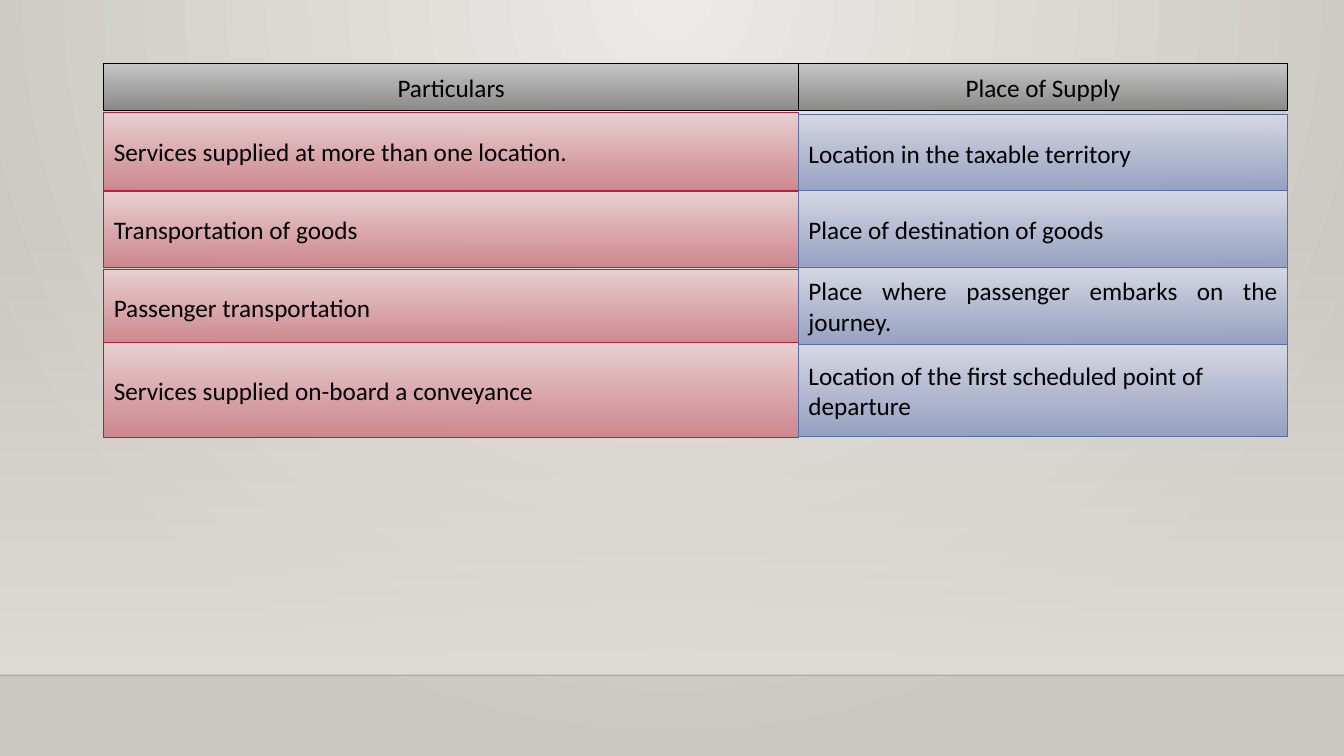
from dataclasses import dataclass

from lxml import etree
from pptx import Presentation
from pptx.dml.color import RGBColor
from pptx.enum import shapes, text
from pptx.oxml.ns import qn
from pptx.util import Inches, Pt


@dataclass(frozen=True)
class Theme:
    font: str = "Calibri"
    size: float = 18
    ink: str = "000000"
    backdrop: tuple = ("ECEAE7", "CAC7C1")
    wall: str = "DFDBD5"
    floor_line: str = "000001"
    # top colour, bottom colour, outline
    header: tuple = ("C8C8C8", "848484", "000000")
    red: tuple = ("EAD1D3", "CD828A", "B71E42")
    blue: tuple = ("D6D9E5", "929DC0", "586EA6")


def set_alpha(color, percent):
    etree.SubElement(color, qn("a:alpha"), val=str(percent * 1000))


class SlideBuilder:
    def __init__(self, slide, theme):
        self.slide = slide
        self.theme = theme

    def background(self):
        """Radial glow centred on the top edge."""
        fill = self.slide.background.fill
        fill.gradient()
        for stop, color in zip(fill.gradient_stops, self.theme.backdrop):
            stop.color.rgb = RGBColor.from_string(color)
        lin = next(self.slide.element.iter(qn("a:lin")))
        glow = etree.Element(qn("a:path"), {"path": "circle"})
        etree.SubElement(glow, qn("a:fillToRect"), l="43000", t="0", r="43000", b="100000")
        lin.getparent().replace(lin, glow)

    def gradient_box(self, x, y, w, h, colors, alphas):
        """Rectangle shaded from top to bottom."""
        sp = self.slide.shapes.add_shape(
            shapes.MSO_SHAPE.RECTANGLE, Inches(x), Inches(y), Inches(w), Inches(h))
        sp.shadow.inherit = False
        sp.fill.gradient()
        sp.fill.gradient_angle = 270
        for stop, color in zip(sp.fill.gradient_stops, colors):
            stop.color.rgb = RGBColor.from_string(color)
        for color, alpha in zip(sp.element.iter(qn("a:srgbClr")), alphas):
            set_alpha(color, alpha)
        sp.line.fill.background()
        return sp

    def floor_line(self, y, width):
        line = self.slide.shapes.add_connector(
            shapes.MSO_CONNECTOR.STRAIGHT, 0, Inches(y), Inches(width), Inches(y))
        line.line.width = Pt(1)
        line.line.color.rgb = RGBColor.from_string(self.theme.floor_line)
        set_alpha(next(line.element.iter(qn("a:srgbClr"))), 20)
        etree.SubElement(line.element.spPr, qn("a:effectLst"))

    def cell(self, x, y, w, h, words, style, align):
        top, bottom, outline = style
        sp = self.gradient_box(x, y, w, h, (top, bottom), (100, 92))
        sp.line.color.rgb = RGBColor.from_string(outline)
        sp.line.width = Pt(0.75)
        tf = sp.text_frame
        tf.word_wrap = True
        tf.vertical_anchor = text.MSO_ANCHOR.MIDDLE
        p = tf.paragraphs[0]
        p.text = words
        p.alignment = align
        p.font.name = self.theme.font
        p.font.size = Pt(self.theme.size)
        p.font.color.rgb = RGBColor.from_string(self.theme.ink)


def main():
    prs = Presentation()
    prs.slide_width, prs.slide_height = Inches(13.33), Inches(7.5)
    theme = Theme()
    page = SlideBuilder(prs.slides.add_slide(prs.slide_layouts[6]), theme)

    page.background()
    page.gradient_box(0, 2.21, 13.33, 4.49, (theme.wall, theme.wall), (0, 100))
    page.floor_line(6.7, 13.33)

    columns = ((1.03, 6.89), (7.92, 4.85))
    center, justify, left = (text.PP_ALIGN.CENTER, text.PP_ALIGN.JUSTIFY, text.PP_ALIGN.LEFT)
    for (x, w), words in zip(columns, ("Particulars", "Place of Supply")):
        page.cell(x, 0.63, w, 0.47, words, theme.header, center)

    # Each cell: words, top, height, alignment
    rows = (
        (("Services supplied at more than one location.", 1.12, 0.77, justify),
         ("Location in the taxable territory", 1.14, 0.77, justify)),
        (("Transportation of goods", 1.9, 0.75, justify),
         ("Place of destination of goods", 1.89, 0.77, justify)),
        (("Passenger transportation", 2.67, 0.75, justify),
         ("Place where passenger embarks on the journey.", 2.65, 0.77, justify)),
        (("Services supplied on-board a conveyance", 3.4, 0.94, justify),
         ("Location of the first scheduled point of departure", 3.42, 0.91, left)),
    )
    for row in rows:
        for (x, w), style, (words, y, h, align) in zip(columns, (theme.red, theme.blue), row):
            page.cell(x, y, w, h, words, style, align)

    prs.save("out.pptx")


if __name__ == "__main__":
    main()
